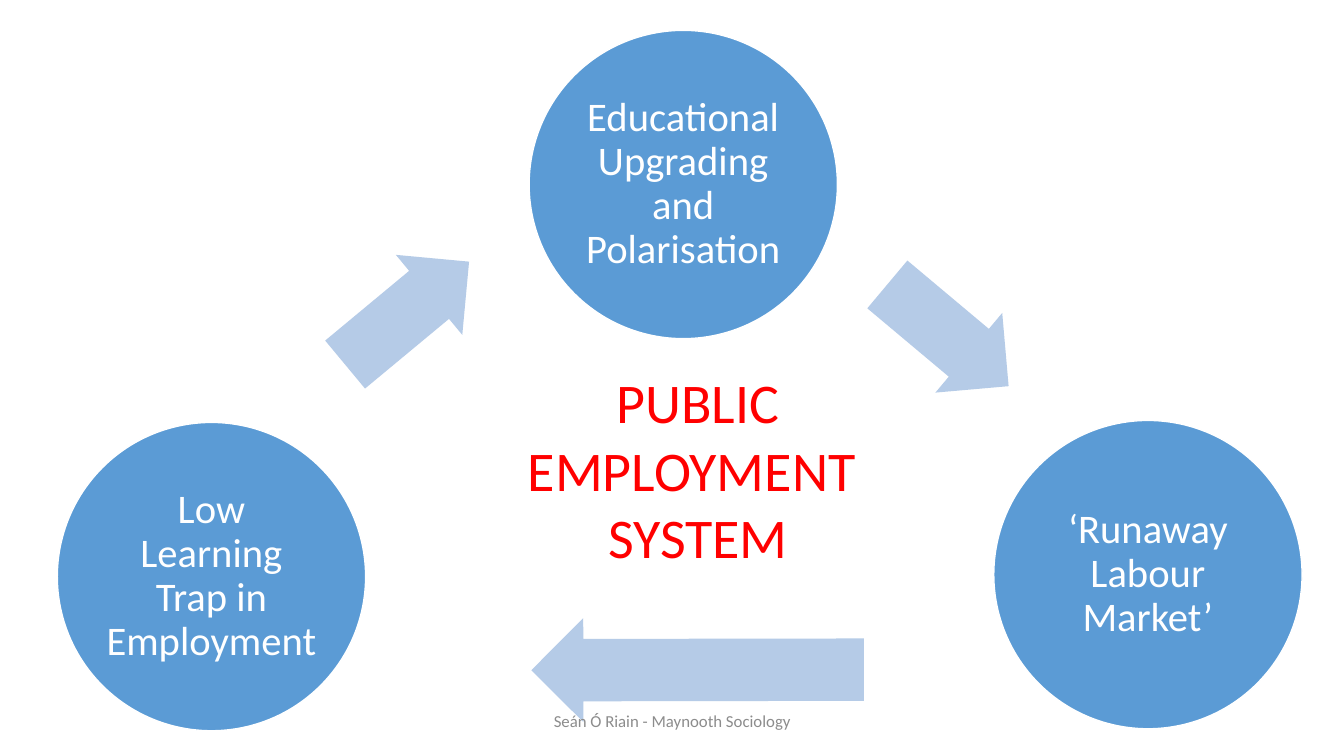
from lxml import etree
from pptx import Presentation
from pptx import util as u
from pptx.dml.color import RGBColor
from pptx.enum import shapes, text

FONT = "Calibri"
BLUE, PALE, WHITE, RED, GREY = "5B9BD5", "B5CBE7", "FFFFFF", "FF0000", "8C8C8C"


def rgb(value):
    return RGBColor.from_string(value)


def write(tf, lines, size, color, inset=(0.25, 0.13), spacing=1.0,
          anchor=text.MSO_ANCHOR.MIDDLE):
    """Fill a text frame with centred paragraphs."""
    tf.word_wrap = True
    tf.vertical_anchor = anchor
    tf.margin_left = tf.margin_right = u.Cm(inset[0])
    tf.margin_top = tf.margin_bottom = u.Cm(inset[1])
    for i, line in enumerate(lines):
        p = tf.add_paragraph() if i else tf.paragraphs[0]
        p.alignment = text.PP_ALIGN.CENTER
        p.line_spacing = spacing
        r = p.add_run()
        r.text = line
        r.font.name, r.font.size = FONT, u.Pt(size)
        r.font.color.rgb = rgb(color)


def add_centred(s, kind, cx, cy, w, h, fill):
    """Add a filled preset shape around a centre point, in cm."""
    sp = s.shapes.add_shape(kind, u.Cm(cx - w / 2), u.Cm(cy - h / 2), u.Cm(w), u.Cm(h))
    sp.shadow.inherit = False
    sp.fill.solid()
    sp.fill.fore_color.rgb = rgb(fill)
    return sp


def add_stage(s, cx, cy, label, diameter=7.77):
    sp = add_centred(s, shapes.MSO_SHAPE.OVAL, cx, cy, diameter, diameter, BLUE)
    sp.line.color.rgb = rgb(WHITE)
    sp.line.width = u.Pt(1)
    write(sp.text_frame, [label], 29, WHITE, inset=(0.05, 0.05), spacing=0.9)


def add_arrow(s, cx, cy, length, angle, height=2.62):
    sp = add_centred(s, shapes.MSO_SHAPE.RIGHT_ARROW, cx, cy, length, height, PALE)
    sp.line.fill.background()
    sp.adjustments[0], sp.adjustments[1] = 0.6, 0.5
    sp.rotation = angle


def add_cycle(s, x, y):
    """Three stages joined by arrows, placed from the top left of the cycle."""
    # Stages
    for dx, dy, label in [
        (15.77, 3.89, "Educational Upgrading and Polarisation"),
        (27.48, 13.72, "‘Runaway Labour Market’"),
        (3.88, 13.77, "Low Learning Trap in Employment"),
    ]:
        add_stage(s, x + dx, y + dy, label)
    # Arrows, clockwise
    for dx, dy, length, angle in [
        (22.44, 7.69, 3.99, 40),
        (16.13, 16.12, 8.38, 179.9),
        (8.81, 7.13, 4.06, 320.3),
    ]:
        add_arrow(s, x + dx, y + dy, length, angle)


def add_label(s, x, y, w, h, lines, size, color, **style):
    tb = s.shapes.add_textbox(u.Cm(x), u.Cm(y), u.Cm(w), u.Cm(h))
    write(tb.text_frame, lines, size, color, **style)


def main():
    prs = Presentation()
    prs.slide_width, prs.slide_height = u.Cm(33.87), u.Cm(19.05)
    s = prs.slides.add_slide(prs.slide_layouts[6])

    add_cycle(s, 1.45, 0.76)
    # Centre label
    add_label(s, 12.14, 9.14, 10.9, 5.38, ["PUBLIC", "EMPLOYMENT ", "SYSTEM"],
              40, RED, anchor=text.MSO_ANCHOR.TOP)
    # Footer
    add_label(s, 11.23, 17.65, 11.43, 1.02, ["Seán Ó Riain - Maynooth Sociology"],
              12, GREY)
    prs.save("out.pptx")


if __name__ == "__main__":
    main()
